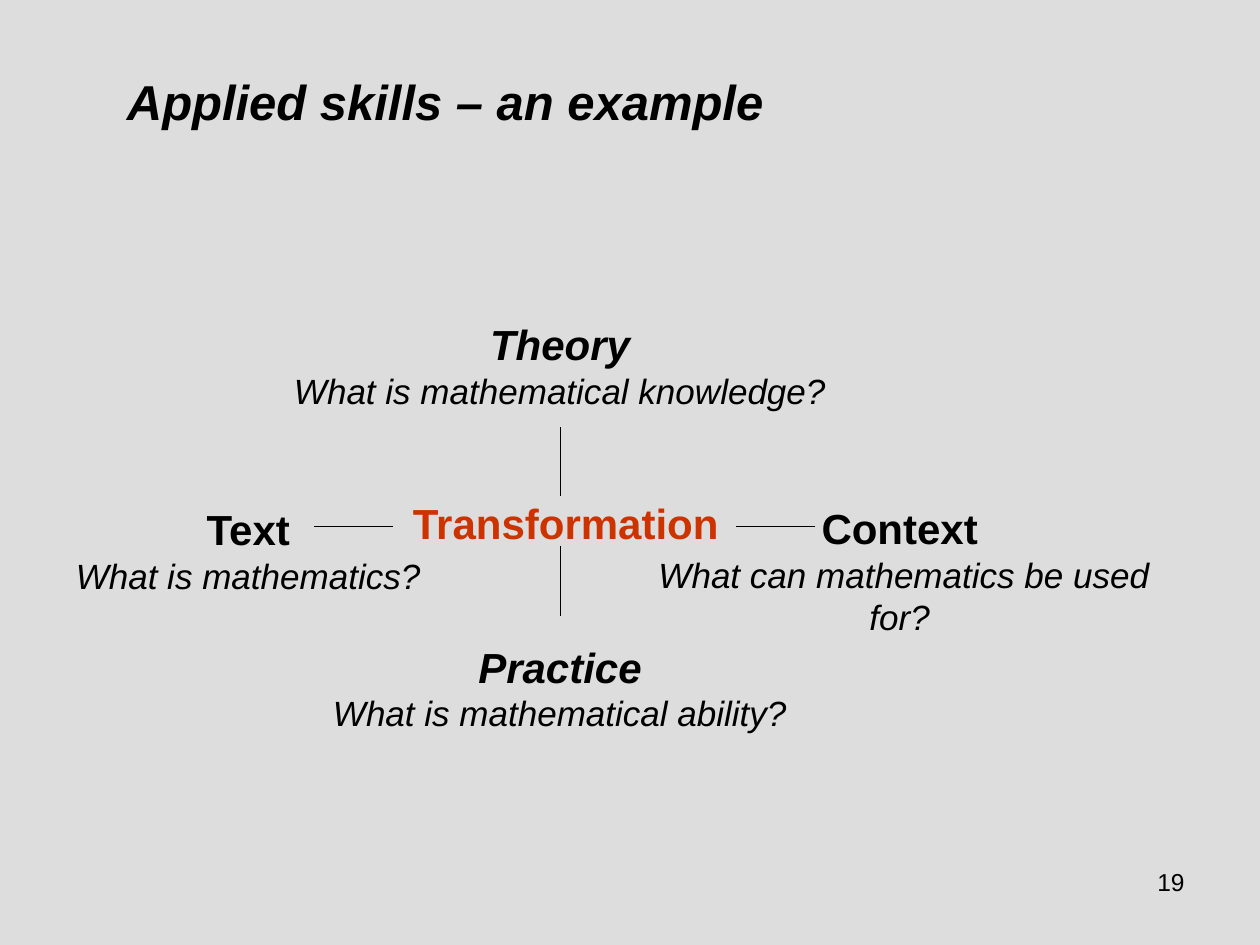
"""Build the slide showing how transformation links theory, practice, text and context."""
from dataclasses import dataclass

from lxml.etree import SubElement
from pptx import Presentation
from pptx.dml.color import RGBColor
from pptx.enum.shapes import MSO_CONNECTOR
from pptx.enum.text import PP_ALIGN
from pptx.oxml.ns import qn
from pptx.slide import Slide
from pptx.util import Inches, Pt


@dataclass(frozen=True)
class Theme:
    font: str = "Arial"
    background: RGBColor = RGBColor(0xDD, 0xDD, 0xDD)
    ink: RGBColor = RGBColor(0, 0, 0)
    accent: RGBColor = RGBColor(0xCC, 0x33, 0x00)
    title: int = 28
    heading: int = 24
    question: int = 20
    spacer: int = 18
    page: int = 14
    stroke: float = 0.75


@dataclass(frozen=True)
class Line:
    text: str
    size: int
    bold: bool = False
    italic: bool = False
    color: RGBColor = Theme.ink
    align: PP_ALIGN = PP_ALIGN.CENTER
    trailing_space: bool = False


@dataclass(frozen=True)
class Block:
    left: float
    top: float
    width: float
    height: float
    lines: tuple[Line, ...]


@dataclass(frozen=True)
class Link:
    start: tuple[float, float]
    end: tuple[float, float]


THEME = Theme()


def concept(left: float, top: float, width: float, name: str, question: str,
            italic: bool) -> Block:
    spaced = not italic
    return Block(left, top, width, 0.83, (
        Line(name, THEME.heading, True, italic, trailing_space=spaced),
        Line(question, THEME.question, italic=True, trailing_space=spaced),
    ))


BLOCKS = (
    Block(7.17, 6.83, 2.33, 0.52, (Line("19", THEME.page, align=PP_ALIGN.RIGHT),)),
    Block(0.91, 0.52, 5.83, 0.57, (
        Line("Applied skills – an example", THEME.title, True, True, align=PP_ALIGN.LEFT),)),
    Block(3.15, 3.9, 2.68, 0.5, (
        Line("Transformation", THEME.heading, True, color=THEME.accent, trailing_space=True),)),
    concept(0.43, 3.95, 3.15, "Text", "What is mathematics?", False),
    concept(2.13, 2.48, 4.63, "Theory", "What is mathematical knowledge?", True),
    concept(4.85, 3.94, 4.65, "Context", "What can mathematics be used for?", False),
    concept(2.53, 5.04, 3.83, "Practice", "What is mathematical ability?", True),
)

AXIS_X, AXIS_Y = 4.45, 4.18
LINKS = (
    Link((AXIS_X, 4.33), (AXIS_X, 4.89)),
    Link((AXIS_X, 3.39), (AXIS_X, 3.94)),
    Link((3.12, AXIS_Y), (2.49, AXIS_Y)),
    Link((6.47, AXIS_Y), (5.84, AXIS_Y)),
)


def draw_block(slide: Slide, block: Block) -> None:
    frame = slide.shapes.add_textbox(
        Inches(block.left), Inches(block.top), Inches(block.width), Inches(block.height)
    ).text_frame
    frame.word_wrap = True
    for index, line in enumerate(block.lines):
        paragraph = frame.add_paragraph() if index else frame.paragraphs[0]
        paragraph.alignment = line.align
        font = paragraph.font
        font.name, font.size = THEME.font, Pt(line.size)
        font.bold, font.italic = line.bold, line.italic
        font.color.rgb = line.color
        paragraph.add_run().text = line.text
        if line.trailing_space:
            space = paragraph.add_run()
            space.text = " "
            space.font.size = Pt(THEME.spacer)
            space.font.bold = space.font.italic = False


def draw_link(slide: Slide, link: Link) -> None:
    connector = slide.shapes.add_connector(
        MSO_CONNECTOR.STRAIGHT, *map(Inches, link.start + link.end))
    connector.line.color.rgb = THEME.ink
    connector.line.width = Pt(THEME.stroke)
    SubElement(connector._element.spPr, qn("a:effectLst"))


def main() -> None:
    presentation = Presentation()
    presentation.slide_width, presentation.slide_height = Inches(10), Inches(7.5)
    slide = presentation.slides.add_slide(presentation.slide_layouts[6])
    slide.background.fill.solid()
    slide.background.fill.fore_color.rgb = THEME.background
    for block in BLOCKS:
        draw_block(slide, block)
    for link in LINKS:
        draw_link(slide, link)
    presentation.save("out.pptx")


if __name__ == "__main__":
    main()
